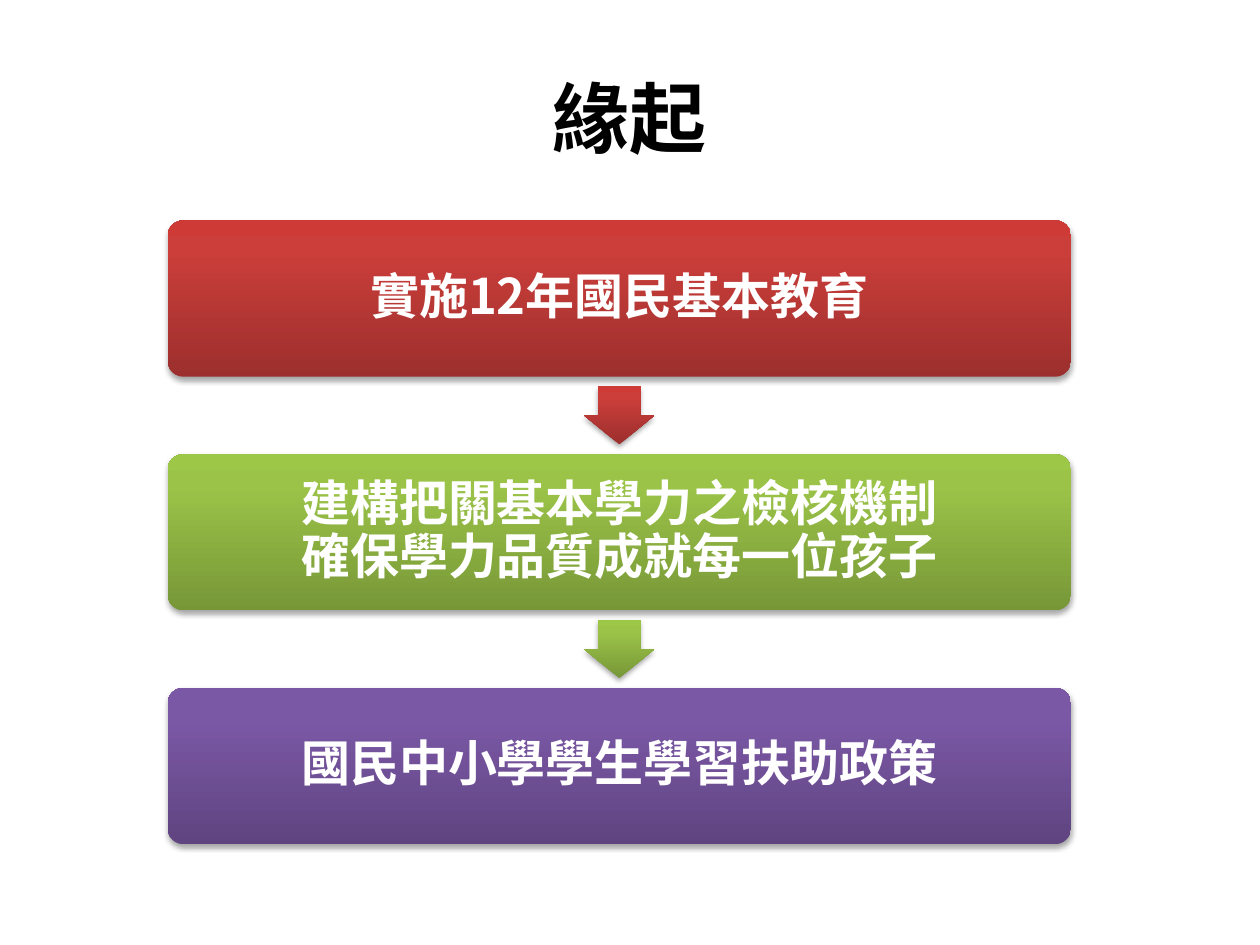
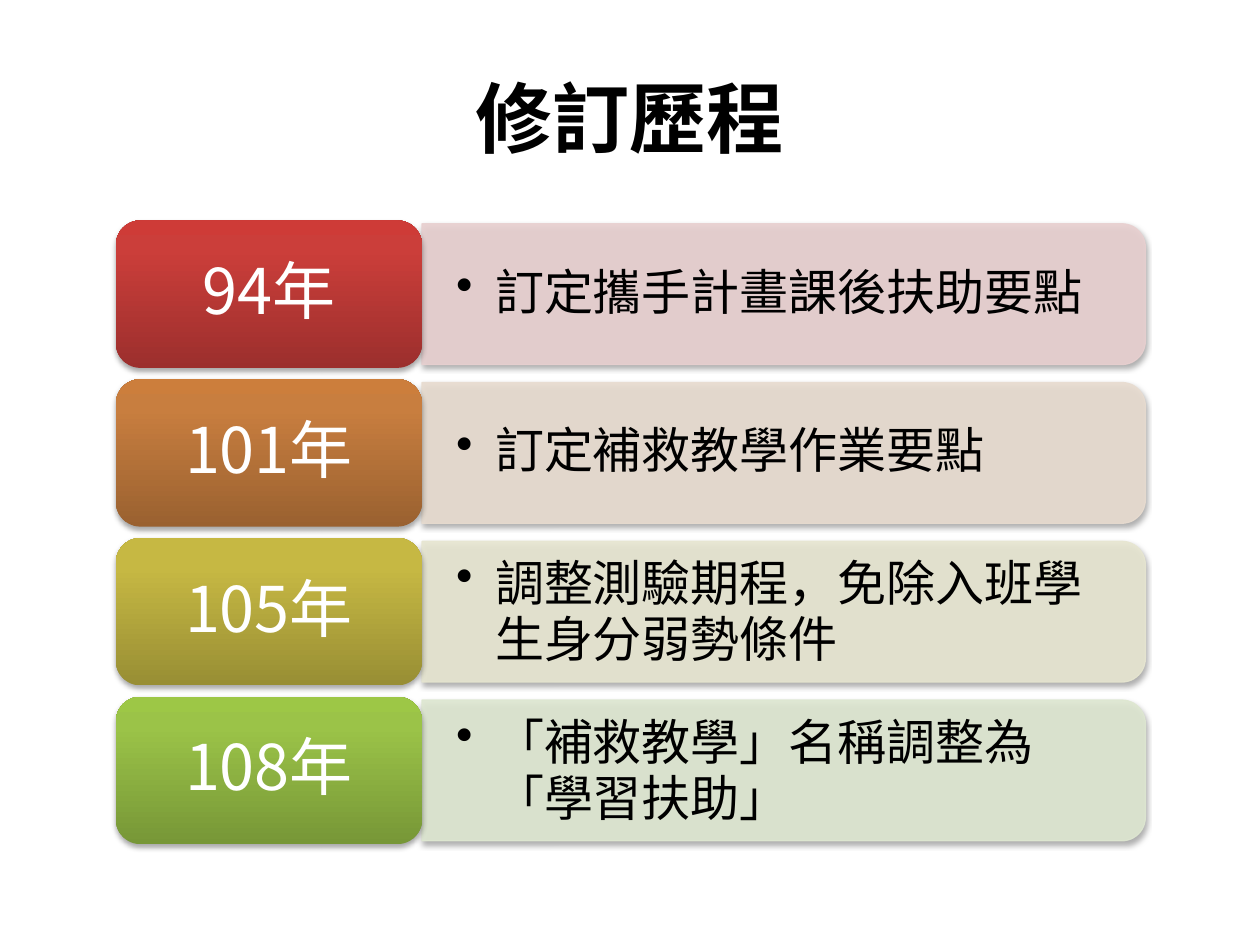
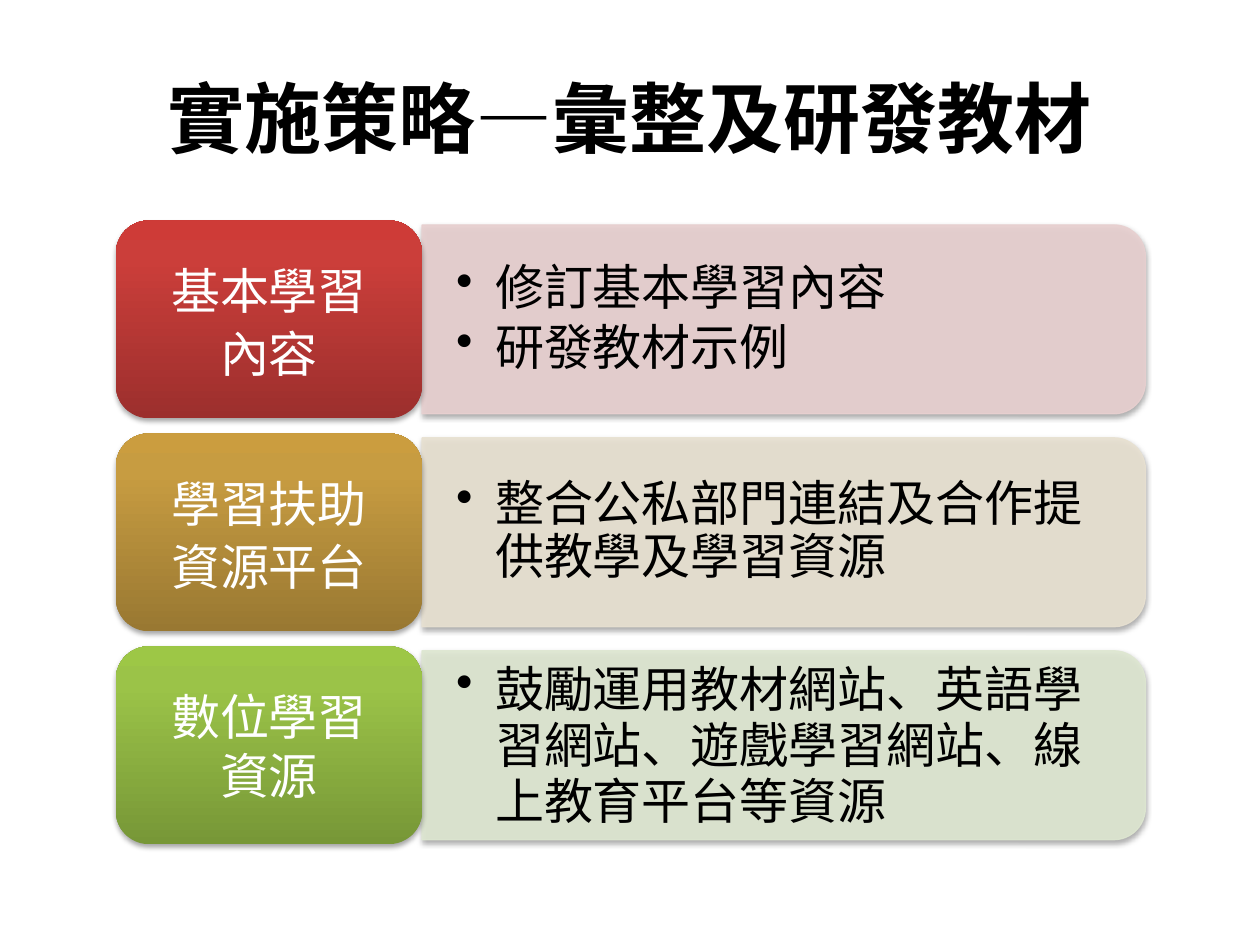
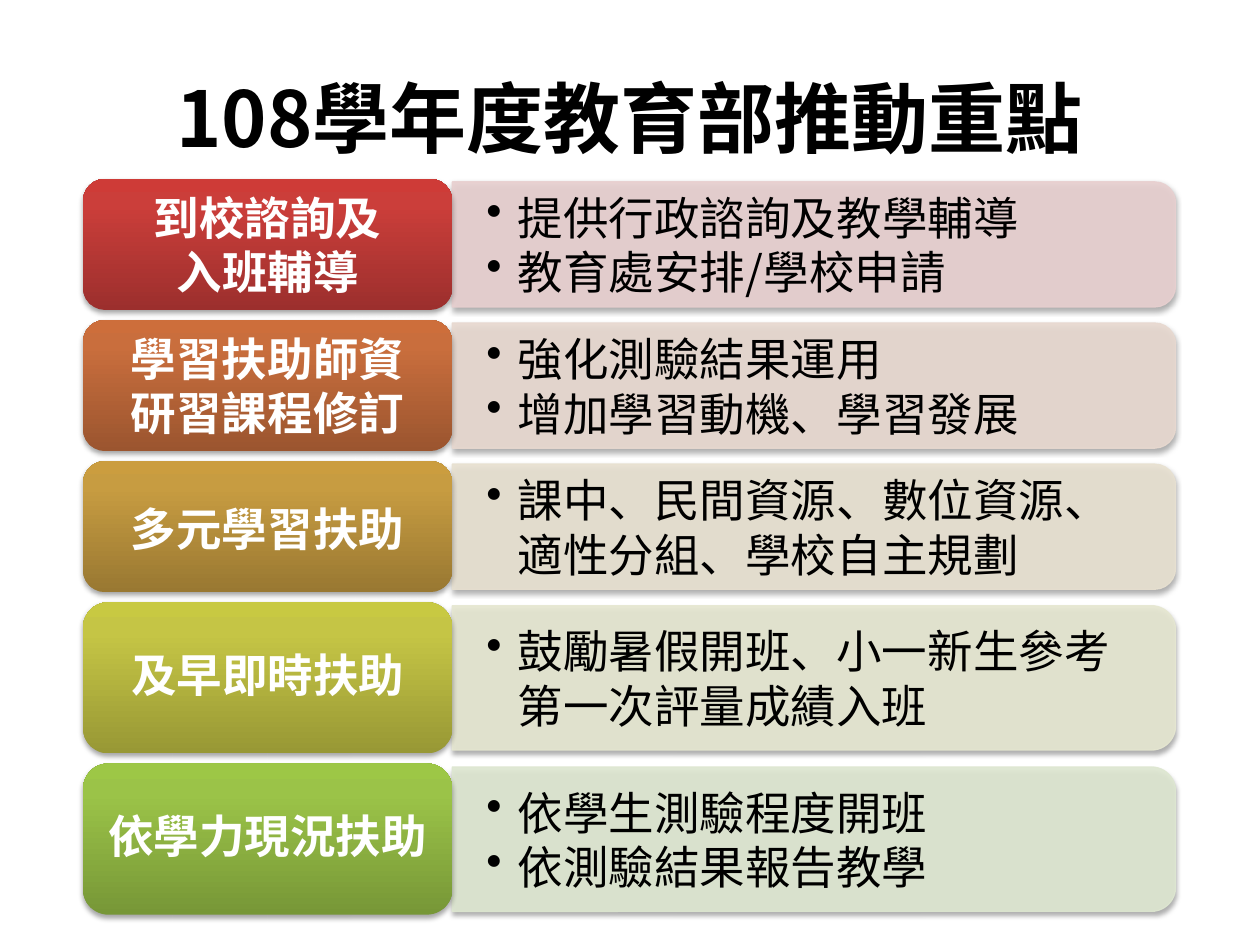
import copy

import pptx
import pptx.dml.color
import pptx.enum.shapes
import pptx.enum.text
import pptx.oxml.ns
import pptx.util
from lxml import etree
from pptx.util import Inches, Pt

FONT = "Noto Sans CJK SC"
COLORS = {"title": "000000", "body": "000000", "label": "FFFFFF", "shadow": "000000"}
# Gradient from bottom to top
GRADIENTS = {
    "red": ("9C2F2D", "CB3E3A", "CE3B37"),
    "rust": ("9B552F", "C96E3D", "CD6E3B"),
    "orange": ("9A6130", "C87E3F", "CC7E3C"),
    "gold": ("997832", "C79C41", "CB9D3F"),
    "mustard": ("988E34", "C6B843", "C9BB41"),
    "lime": ("989835", "C5C545", "C8C942"),
    "green": ("779737", "9BC348", "9DC746"),
    "purple": ("5F4480", "7B58A6", "7C57A8"),
}
PANELS = {
    "red": "E8D0D0", "rust": "E8D9D0", "orange": "E8DCD0", "gold": "E8E1D1",
    "mustard": "E7E6D1", "lime": "E6E7D1", "green": "DEE7D1",
}
STOPS = (0, 0.8, 1)

ORIGIN_TITLE = "緣起"
ORIGIN_STEPS = [
    ("red", "實施12年國民基本教育"),
    ("green", "建構把關基本學力之檢核機制\n確保學力品質成就每一位孩子"),
    ("purple", "國民中小學學生學習扶助政策"),
]

# Row: colour, height, label, label spacing, bullets, bullet spacing
# Spacing is a multiple of the line when below 2, else points
LISTS = [
    {
        "title": "修訂歷程",
        "left": 0.92, "top": 1.75, "label_width": 2.43, "gap": 0.09,
        "label_size": 36, "label_bold": False, "label_margins": (0.15, 0.07),
        "body_size": 28, "indent": 0.31,
        "rows": [
            ("red", 1.17, "94年", 0.9, ["訂定攜手計畫課後扶助要點"], 0.9),
            ("orange", 1.17, "101年", 0.9, ["訂定補救教學作業要點"], 0.9),
            ("mustard", 1.17, "105年", 0.9, ["調整測驗期程，免除入班學生身分弱勢條件"], 32),
            ("green", 1.17, "108年", 0.9, ["「補救教學」名稱調整為「學習扶助」"], 32),
        ],
    },
    {
        "title": "實施策略—彙整及研發教材",
        "left": 0.92, "top": 1.75, "label_width": 2.43, "gap": 0.12,
        "label_size": 28, "label_bold": False, "label_margins": (0.12, 0.06),
        "body_size": 28, "indent": 0.31,
        "rows": [
            ("red", 1.57, "基本學習\n內容", 36, ["修訂基本學習內容", "研發教材示例"], 0.9),
            ("gold", 1.57, "學習扶助\n資源平台", 36,
             ["整合公私部門連結及合作提供教學及學習資源"], 0.9),
            ("green", 1.57, "數位學習\n資源", 33.6,
             ["鼓勵運用教材網站、英語學習網站、遊戲學習網站、線上教育平台等資源"], 32),
        ],
    },
    {
        "title": "108學年度教育部推動重點",
        "left": 0.66, "top": 1.42, "label_width": 2.93, "gap": 0.08,
        "label_size": 26, "label_bold": True, "label_margins": (0.11, 0.05),
        "body_size": 26, "indent": 0.25,
        "rows": [
            ("red", 1.04, "到校諮詢及\n入班輔導", 31,
             ["提供行政諮詢及教學輔導", "教育處安排/學校申請"], 31.2),
            ("rust", 1.04, "學習扶助師資\n研習課程修訂", 31,
             ["強化測驗結果運用", "增加學習動機、學習發展"], 31.2),
            ("gold", 1.04, "多元學習扶助", 33.6,
             ["課中、民間資源、數位資源、適性分組、學校自主規劃"], 31.2),
            ("lime", 1.2, "及早即時扶助", 0.9,
             ["鼓勵暑假開班、小一新生參考第一次評量成績入班"], 31.2),
            ("green", 1.2, "依學力現況扶助", 0.9,
             ["依學生測驗程度開班", "依測驗結果報告教學"], 31.2),
        ],
    },
]
PANEL_WIDTH = 5.74
PANEL_RATIO = 0.955
CORNER_RATIO = 0.05

SHAPES = pptx.enum.shapes.MSO_SHAPE
CENTER = pptx.enum.text.PP_ALIGN.CENTER
LEFT = pptx.enum.text.PP_ALIGN.LEFT
qn = pptx.oxml.ns.qn


def rgb(value):
    return pptx.dml.color.RGBColor.from_string(value)


def format_paragraph(paragraph, size, color, bold, alignment):
    paragraph.alignment = alignment
    font = paragraph.font
    font.name, font.size, font.bold = FONT, Pt(size), bold
    font.color.rgb = rgb(color)
    defaults = paragraph._p.pPr.find(qn("a:defRPr"))
    etree.SubElement(defaults, qn("a:ea"), typeface=FONT)


def add_bullet(paragraph, indent):
    paragraph.level = 1
    properties = paragraph._p.pPr
    properties.set("marL", str(Inches(indent)))
    properties.set("indent", str(-Inches(indent)))
    bullet = etree.Element(qn("a:buChar"), char="•")
    properties.find(qn("a:defRPr")).addprevious(bullet)


def add_text(slide, box, texts, size, color, spacing, margins, bold=False, indent=None):
    """Add a middle-anchored text box; an indent makes its paragraphs bullets."""
    frame = slide.shapes.add_textbox(*map(Inches, box)).text_frame
    frame.word_wrap = True
    frame.vertical_anchor = pptx.enum.text.MSO_ANCHOR.MIDDLE
    frame.margin_left = frame.margin_right = Inches(margins[0])
    frame.margin_top = frame.margin_bottom = Inches(margins[1])
    for index, text in enumerate(texts):
        paragraph = frame.add_paragraph() if index else frame.paragraphs[0]
        paragraph.text = text
        paragraph.line_spacing = spacing if spacing < 2 else Pt(spacing)
        if index and spacing < 2:
            paragraph.space_before = Pt(4)
        format_paragraph(paragraph, size, color, bold, CENTER if indent is None else LEFT)
        if indent is not None:
            add_bullet(paragraph, indent)


def add_shadowed_shape(slide, kind, box):
    shape = slide.shapes.add_shape(kind, *map(Inches, box))
    shape.shadow.inherit = False
    effects = shape._element.spPr.find(qn("a:effectLst"))
    shadow = etree.SubElement(effects, qn("a:outerShdw"), blurRad=str(Pt(3.1)),
                              dist=str(Pt(1.8)), dir="5400000", rotWithShape="0")
    color = etree.SubElement(shadow, qn("a:srgbClr"), val=COLORS["shadow"])
    etree.SubElement(color, qn("a:alpha"), val="35000")
    return shape


def add_gradient_shape(slide, kind, box, color):
    shape = add_shadowed_shape(slide, kind, box)
    shape.line.fill.background()
    shape.fill.gradient()
    shape.fill.gradient_angle = 90
    gradient = shape._element.spPr.find(qn("a:gradFill"))
    gradient.set("rotWithShape", "0")
    stops = gradient.find(qn("a:gsLst"))
    stops.append(copy.deepcopy(stops[0]))
    for stop, position, value in zip(shape.fill.gradient_stops, STOPS, GRADIENTS[color]):
        stop.position = position
        stop.color.rgb = rgb(value)
    return shape


def add_panel(slide, left, middle, height, color):
    """Add a panel with round right corners, turned a quarter from its preset."""
    box = (left + (PANEL_WIDTH - height) / 2, middle - PANEL_WIDTH / 2, height, PANEL_WIDTH)
    panel = add_shadowed_shape(slide, SHAPES.ROUND_2_SAME_RECTANGLE, box)
    panel.rotation = 90
    panel.fill.solid()
    panel.line.width = Pt(0.75)
    for part in (panel.fill.fore_color, panel.line.color):
        part.rgb = rgb(PANELS[color])
    for value in panel._element.spPr.findall(".//" + qn("a:solidFill") + "/" + qn("a:srgbClr")):
        etree.SubElement(value, qn("a:alpha"), val="90000")


def add_titled_slide(presentation, text):
    slide = presentation.slides.add_slide(presentation.slide_layouts[5])
    title = slide.shapes.title
    title.left, title.top, title.width, title.height = map(Inches, (0.5, 0.3, 9, 1.25))
    title.text_frame.vertical_anchor = pptx.enum.text.MSO_ANCHOR.MIDDLE
    paragraph = title.text_frame.paragraphs[0]
    paragraph.text = text
    format_paragraph(paragraph, 44, COLORS["title"], True, CENTER)
    return slide


def build_origin(presentation):
    slide = add_titled_slide(presentation, ORIGIN_TITLE)
    left, top, width, height, gap, inset = 1.33, 1.75, 7.17, 1.24, 0.615, 0.04
    arrow_length, arrow_width = 0.46, 0.56
    for index, (color, text) in enumerate(ORIGIN_STEPS):
        step_top = top + index * (height + gap)
        step = add_gradient_shape(slide, SHAPES.ROUNDED_RECTANGLE,
                                  (left, step_top, width, height), color)
        step.adjustments[0] = 0.1
        add_text(slide, (left + inset, step_top + inset, width - 2 * inset, height - 2 * inset),
                 [text], 28, COLORS["label"], 0.9, (0.12, 0.12), bold=True)
        if index < len(ORIGIN_STEPS) - 1:
            arrow_box = (left + (width - arrow_length) / 2,
                         step_top + height + (gap - arrow_width) / 2,
                         arrow_length, arrow_width)
            arrow = add_gradient_shape(slide, SHAPES.RIGHT_ARROW, arrow_box, color)
            arrow.rotation = 90
            arrow.adjustments[0] = 0.6
            arrow.adjustments[1] = 0.5


def build_list(presentation, content):
    slide = add_titled_slide(presentation, content["title"])
    left, top, label_width = content["left"], content["top"], content["label_width"]
    panel_left = left + label_width
    for color, height, label, label_spacing, bullets, body_spacing in content["rows"]:
        middle = top + height / 2
        panel_height = height * PANEL_RATIO
        add_panel(slide, panel_left, middle, panel_height, color)
        body_height = panel_height * (1 - 2 * CORNER_RATIO)
        body_width = PANEL_WIDTH - panel_height * CORNER_RATIO
        add_text(slide, (panel_left, middle - body_height / 2, body_width, body_height),
                 bullets, content["body_size"], COLORS["body"], body_spacing,
                 (0.27, 0.14), indent=content["indent"])
        add_gradient_shape(slide, SHAPES.ROUNDED_RECTANGLE,
                           (left, top, label_width, height), color)
        inset = height * CORNER_RATIO
        add_text(slide, (left + inset, top + inset, label_width - 2 * inset, height - 2 * inset),
                 [label], content["label_size"], COLORS["label"], label_spacing,
                 content["label_margins"], bold=content["label_bold"])
        top += height + content["gap"]


def main():
    presentation = pptx.Presentation()
    presentation.slide_width, presentation.slide_height = Inches(10), Inches(7.5)
    build_origin(presentation)
    for content in LISTS:
        build_list(presentation, content)
    presentation.save("out.pptx")


if __name__ == "__main__":
    main()
